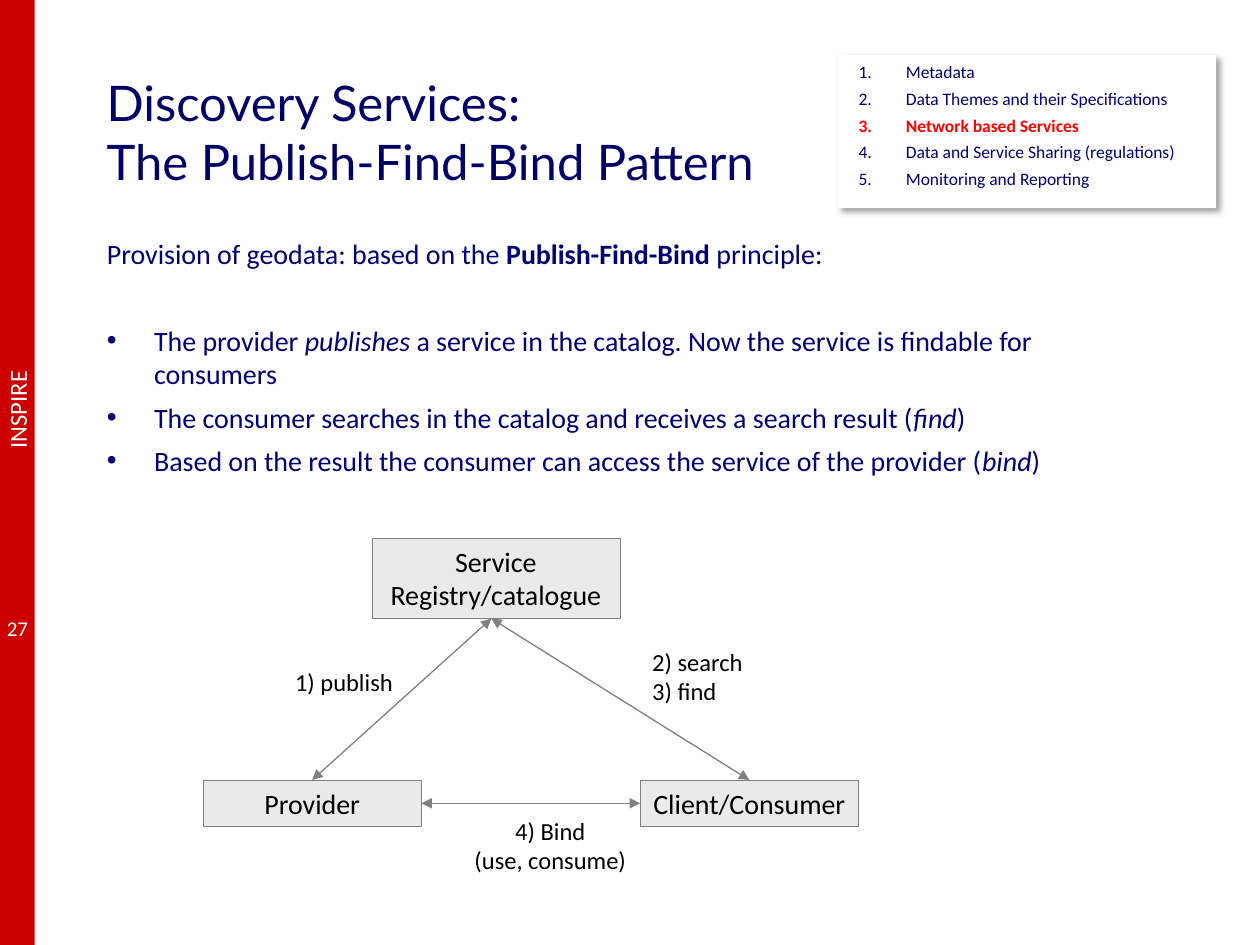
from dataclasses import dataclass

from lxml.etree import SubElement
from pptx import Presentation
from pptx.dml.color import RGBColor
from pptx.enum.shapes import MSO_CONNECTOR, MSO_SHAPE
from pptx.enum.text import MSO_ANCHOR, MSO_AUTO_SIZE, PP_ALIGN
from pptx.oxml.ns import qn
from pptx.util import Pt

NAVY, TITLE_NAVY, RED, ALERT = "000072", "000066", "CC0000", "FF0000"
BLACK, WHITE, GRAY, PALE = "000000", "FFFFFF", "808080", "EAEAEA"


@dataclass
class Span:
    text: str
    bold: bool = False
    italic: bool = False
    color: str | None = None
    new_line: bool = False


@dataclass
class Para:
    spans: list[Span]
    before: float = 0
    bullet: str | None = None  # a character, or "auto" for numbers
    left: float = 0
    hanging: float = 0


@dataclass
class Area:
    x: float
    y: float
    width: float
    height: float

    def lengths(self):
        return Pt(self.x), Pt(self.y), Pt(self.width), Pt(self.height)


@dataclass
class Node:
    label: str
    area: Area


def paint(target, color: str) -> None:
    """Give a fill or a font one solid colour."""
    if hasattr(target, "solid"):
        target.solid()
        target.fore_color.rgb = RGBColor.from_string(color)
    else:
        target.color.rgb = RGBColor.from_string(color)


def write(frame, paras: list[Para], size: float, color: str,
          align=PP_ALIGN.LEFT, font: str = "Calibri", wrap: bool = True) -> None:
    frame.word_wrap = wrap
    frame.auto_size = MSO_AUTO_SIZE.NONE
    for index, item in enumerate(paras):
        para = frame.paragraphs[0] if index == 0 else frame.add_paragraph()
        para.alignment = align
        para.space_before = Pt(item.before)
        if item.bullet:
            props = para._p.get_or_add_pPr()
            props.set("marL", str(Pt(item.left)))
            props.set("indent", str(-Pt(item.hanging)))
            if item.bullet == "auto":
                SubElement(props, qn("a:buFont"), typeface="+mj-lt")
                SubElement(props, qn("a:buAutoNum"), type="arabicPeriod")
            else:
                SubElement(props, qn("a:buFont"), typeface="Arial")
                SubElement(props, qn("a:buChar"), char=item.bullet)
        for span in item.spans:
            if span.new_line:
                para.add_line_break()
            run = para.add_run()
            run.text = span.text
            run.font.name, run.font.size = font, Pt(size)
            run.font.bold, run.font.italic = span.bold, span.italic
            paint(run.font, span.color or color)


def add_text(page, area: Area, paras: list[Para], size: float, color: str, **options):
    box = page.shapes.add_textbox(*area.lengths())
    write(box.text_frame, paras, size, color, **options)
    return box


def add_box(page, area: Area, fill: str, line: str | None = None):
    box = page.shapes.add_shape(MSO_SHAPE.RECTANGLE, *area.lengths())
    box.shadow.inherit = False
    paint(box.fill, fill)
    if line:
        paint(box.line.fill, line)
        box.line.width = Pt(0.25)
    else:
        box.line.fill.background()
    box.text_frame.vertical_anchor = MSO_ANCHOR.TOP
    return box


def add_double_arrow(page, start: tuple[float, float], end: tuple[float, float]) -> None:
    arrow = page.shapes.add_connector(
        MSO_CONNECTOR.STRAIGHT, *(Pt(value) for value in start + end))
    paint(arrow.line.fill, GRAY)
    arrow.line.width = Pt(0.75)
    line = arrow.line._get_or_add_ln()
    for tip in ("a:headEnd", "a:tailEnd"):
        SubElement(line, qn(tip), type="triangle")
    SubElement(arrow._element.spPr, qn("a:effectLst"))


def add_drop_shadow(shape) -> None:
    effects = shape._element.spPr.find(qn("a:effectLst"))
    shadow = SubElement(effects, qn("a:outerShdw"), blurRad=str(Pt(4)), dist=str(Pt(3)),
                        dir="2700000", algn="tl", rotWithShape="0")
    tint = SubElement(shadow, qn("a:srgbClr"), val=BLACK)
    SubElement(tint, qn("a:alpha"), val="40000")


def plain(*lines: str) -> list[Para]:
    return [Para([Span(line)]) for line in lines]


def point(*spans: Span, before: float = 5.5) -> Para:
    return Para(list(spans), before, "•", 27, 27)


def main() -> None:
    deck = Presentation()
    deck.slide_width, deck.slide_height = Pt(720), Pt(540)
    page = deck.slides.add_slide(deck.slide_layouts[5])

    # Side band with course name and page number
    add_box(page, Area(0, 0, 19.8, 540), RED)
    course = add_text(page, Area(-19.5, 221.5, 59, 24.5), plain("INSPIRE"), 14, WHITE, wrap=False)
    course.rotation = 270
    add_text(page, Area(-5, 348, 30, 24), plain("27"), 12, WHITE, align=PP_ALIGN.CENTER)

    # Title
    title = page.shapes.title
    title.left, title.top, title.width, title.height = Area(53.75, 48, 589, 54).lengths()
    title.text_frame.vertical_anchor = MSO_ANCHOR.MIDDLE
    write(title.text_frame, [Para([Span("Discovery Services: "),
                                   Span("The Publish-Find-Bind Pattern", new_line=True)])],
          28, TITLE_NAVY, font="Lato")

    # Explanation
    add_text(page, Area(54, 131.5, 589, 354), [
        Para([Span("Provision of geodata: based on the "),
              Span("Publish-Find-Bind", bold=True), Span(" principle:")]),
        point(Span("The provider "), Span("publishes ", italic=True),
              Span("a service in the catalog. Now the service is findable for consumers"),
              before=30.5),
        point(Span("The consumer searches in the catalog and receives a search result ("),
              Span("find", italic=True), Span(")")),
        point(Span("Based on the result the consumer can access the service of the provider ("),
              Span("bind", italic=True), Span(")")),
    ], 16, NAVY)

    # Publish-find-bind triangle
    provider = Node("Provider", Area(116, 445.7, 124.8, 26.6))
    client = Node("Client/Consumer", Area(365.8, 445.7, 124.8, 26.6))
    registry = Node("Service Registry/catalogue", Area(212.5, 307.5, 141.8, 46))
    for node in (client, provider, registry):
        box = add_box(page, node.area, PALE, GRAY)
        write(box.text_frame, plain(node.label), 16, BLACK, align=PP_ALIGN.CENTER)

    row = provider.area
    middle = row.y + row.height / 2
    add_double_arrow(page, (client.area.x, middle), (row.x + row.width, middle))
    for node in (provider, client):
        add_double_arrow(page, (280.8, registry.area.y + registry.area.height),
                         (node.area.x + node.area.width / 2, node.area.y))

    # Step labels
    add_text(page, Area(263.5, 462.7, 102, 41), plain("4) Bind", "(use, consume)"), 14, BLACK,
             align=PP_ALIGN.CENTER, wrap=False)
    add_text(page, Area(161.5, 377.6, 71, 24.5), plain("1) publish"), 14, BLACK, wrap=False)
    add_text(page, Area(365.6, 366.2, 67, 41), plain("2) search", "3) find"), 14, BLACK,
             wrap=False)

    # Agenda with the current topic marked
    topics = ["Metadata", "Data Themes and their Specifications", "Network based Services",
              "Data and Service Sharing (regulations)", "Monitoring and Reporting"]
    current = 2
    agenda = add_box(page, Area(479, 31.4, 216, 87.6), WHITE)
    add_drop_shadow(agenda)
    write(agenda.text_frame, [
        Para([Span(topic, index == current, color=ALERT if index == current else None)],
             3.3 if index else 0, "auto", 31.6, 27)
        for index, topic in enumerate(topics)
    ], 10, NAVY)

    deck.save("out.pptx")


if __name__ == "__main__":
    main()
